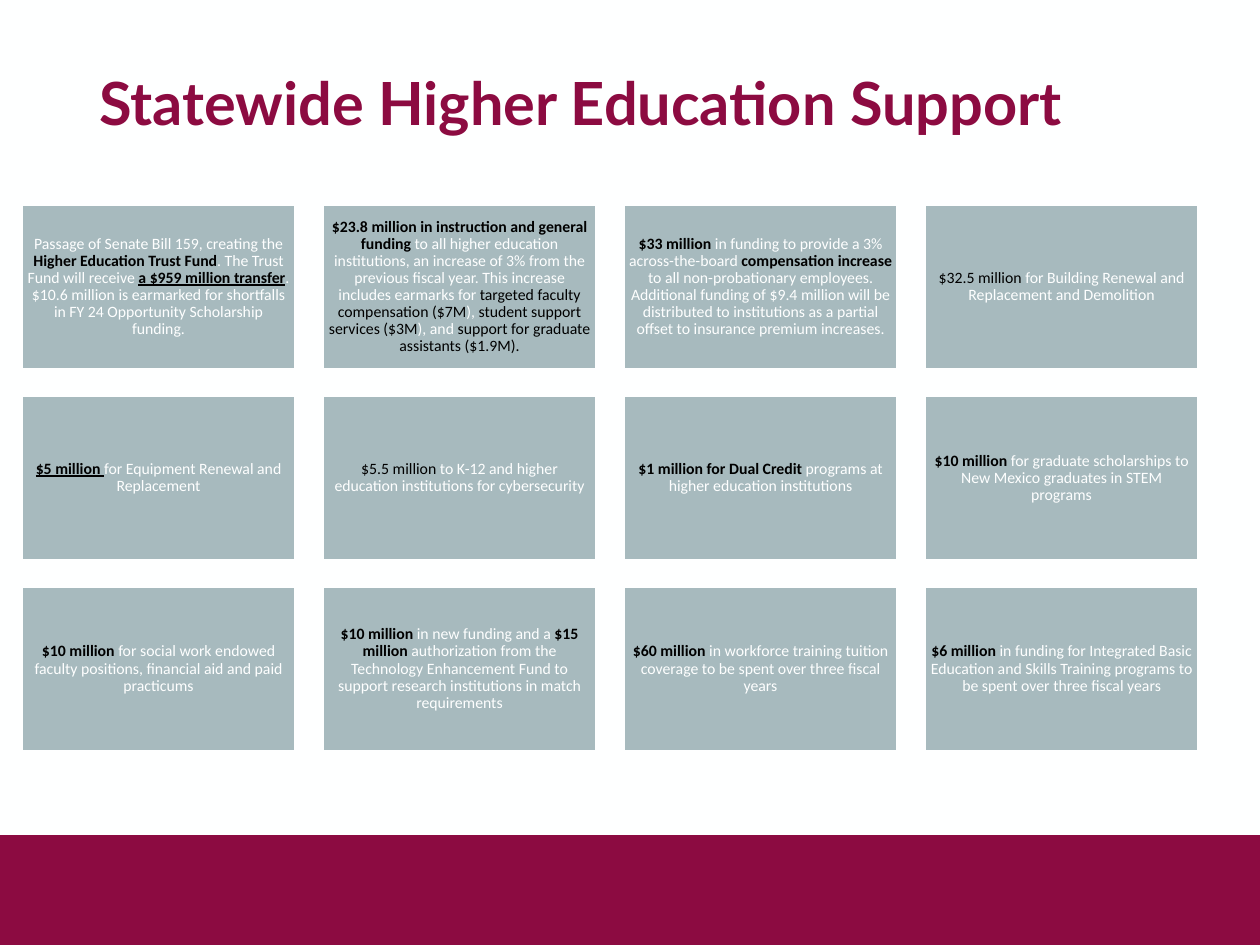
from dataclasses import dataclass

import pptx
import pptx.dml.color
import pptx.enum.shapes
import pptx.enum.text
import pptx.util

PX_PER_INCH = 126
MAROON, SAGE, WHITE, BLACK = "8C0B41", "A7BABE", "FEFFFF", "000000"
COLUMNS = 4
TILE_LEFT, TILE_TOP = 22, 205
TILE_WIDTH, TILE_HEIGHT = 273, 164
COLUMN_PITCH, ROW_PITCH = 301, 191
TILE_INSET = 5


@dataclass(frozen=True)
class Phrase:
    text: str
    color: str = WHITE
    bold: bool = False
    underline: bool = False


def marked(text: str) -> Phrase:
    return Phrase(text, BLACK)


def strong(text: str) -> Phrase:
    return Phrase(text, BLACK, bold=True)


def underlined(text: str) -> Phrase:
    return Phrase(text, BLACK, bold=True, underline=True)


TILES = [
    [Phrase("Passage of Senate Bill 159, creating the "),
     strong("Higher Education Trust Fund"),
     Phrase(". The Trust Fund will receive "),
     underlined("a $959 million transfer"),
     Phrase(". $10.6 million is earmarked for shortfalls in FY 24 "
            "Opportunity Scholarship funding.")],
    [strong("$23.8 million in instruction and general funding"),
     Phrase(" to all higher education institutions, an increase of 3% from the "
            "previous fiscal year. This increase includes earmarks for "),
     marked("targeted faculty compensation ($7M"), Phrase("), "),
     marked("student support services ($3M"), Phrase("), and "),
     marked("support for graduate assistants ($1.9M).")],
    [strong("$33 million "),
     Phrase("in funding to provide a 3% across-the-board "),
     strong("compensation increase "),
     Phrase("to all non-probationary employees. Additional funding of "
            "$9.4 million will be distributed to institutions as a partial "
            "offset to insurance premium increases.")],
    [marked("$32.5 million "),
     Phrase("for Building Renewal and Replacement and Demolition")],
    [underlined("$5 million "), Phrase("for Equipment Renewal and Replacement")],
    [marked("$5.5 million "),
     Phrase("to K-12 and higher education institutions for cybersecurity")],
    [strong("$1 million for Dual Credit "),
     Phrase("programs at higher education institutions")],
    [strong("$10 million "),
     Phrase("for graduate scholarships to New Mexico graduates in STEM programs")],
    [strong("$10 million "),
     Phrase("for social work endowed faculty positions, financial aid and paid "
            "practicums")],
    [strong("$10 million "), Phrase("in new funding and a "),
     strong("$15 million"),
     Phrase(" authorization from the Technology Enhancement Fund to support "
            "research institutions in match requirements")],
    [strong("$60 million "),
     Phrase("in workforce training tuition coverage to be spent over three "
            "fiscal years")],
    [strong("$6 million "),
     Phrase("in funding for Integrated Basic Education and Skills Training "
            "programs to be spent over three fiscal years")],
]


def px(length: int) -> int:
    return round(length * 914400 / PX_PER_INCH)


def rgb(color: str) -> pptx.dml.color.RGBColor:
    return pptx.dml.color.RGBColor.from_string(color)


def add_run(paragraph, phrase: Phrase, font: str, size: int) -> None:
    run = paragraph.add_run()
    run.text = phrase.text
    run.font.name = font
    run.font.size = pptx.util.Pt(size)
    run.font.color.rgb = rgb(phrase.color)
    run.font.bold = phrase.bold
    run.font.underline = phrase.underline


def add_rectangle(slide, left: int, top: int, width: int, height: int, fill: str):
    rectangle = slide.shapes.add_shape(
        pptx.enum.shapes.MSO_SHAPE.RECTANGLE,
        px(left), px(top), px(width), px(height))
    rectangle.shadow.inherit = False
    rectangle.fill.solid()
    rectangle.fill.fore_color.rgb = rgb(fill)
    rectangle.line.fill.background()
    return rectangle


def add_tile(slide, index: int, phrases: list[Phrase]) -> None:
    row, column = divmod(index, COLUMNS)
    tile = add_rectangle(slide, TILE_LEFT + column * COLUMN_PITCH,
                         TILE_TOP + row * ROW_PITCH,
                         TILE_WIDTH, TILE_HEIGHT, SAGE)
    tile.line.color.rgb = rgb(WHITE)
    tile.line.width = pptx.util.Pt(1)
    frame = tile.text_frame
    frame.word_wrap = True
    frame.vertical_anchor = pptx.enum.text.MSO_ANCHOR.MIDDLE
    frame.margin_left = frame.margin_right = px(TILE_INSET)
    frame.margin_top = frame.margin_bottom = px(TILE_INSET)
    paragraph = frame.paragraphs[0]
    paragraph.alignment = pptx.enum.text.PP_ALIGN.CENTER
    paragraph.line_spacing = 0.9
    for phrase in phrases:
        add_run(paragraph, phrase, "Calibri", 9)


def set_title(slide, text: str) -> None:
    title = slide.shapes.title
    title.left, title.top, title.width, title.height = map(px, (87, 50, 1121, 112))
    frame = title.text_frame
    frame.word_wrap = True
    frame.auto_size = pptx.enum.text.MSO_AUTO_SIZE.NONE
    frame.vertical_anchor = pptx.enum.text.MSO_ANCHOR.MIDDLE
    paragraph = frame.paragraphs[0]
    paragraph.alignment = pptx.enum.text.PP_ALIGN.LEFT
    paragraph.line_spacing = 0.9
    add_run(paragraph, Phrase(text, MAROON, bold=True), "Lato", 34)


def main() -> None:
    presentation = pptx.Presentation()
    presentation.slide_width, presentation.slide_height = px(1260), px(945)
    slide = presentation.slides.add_slide(presentation.slide_layouts[5])
    slide.background.fill.solid()
    slide.background.fill.fore_color.rgb = rgb(WHITE)

    set_title(slide, "Statewide Higher Education Support")
    add_rectangle(slide, 0, 835, 1260, 110, MAROON)
    for index, phrases in enumerate(TILES):
        add_tile(slide, index, phrases)

    presentation.save("out.pptx")


if __name__ == "__main__":
    main()
